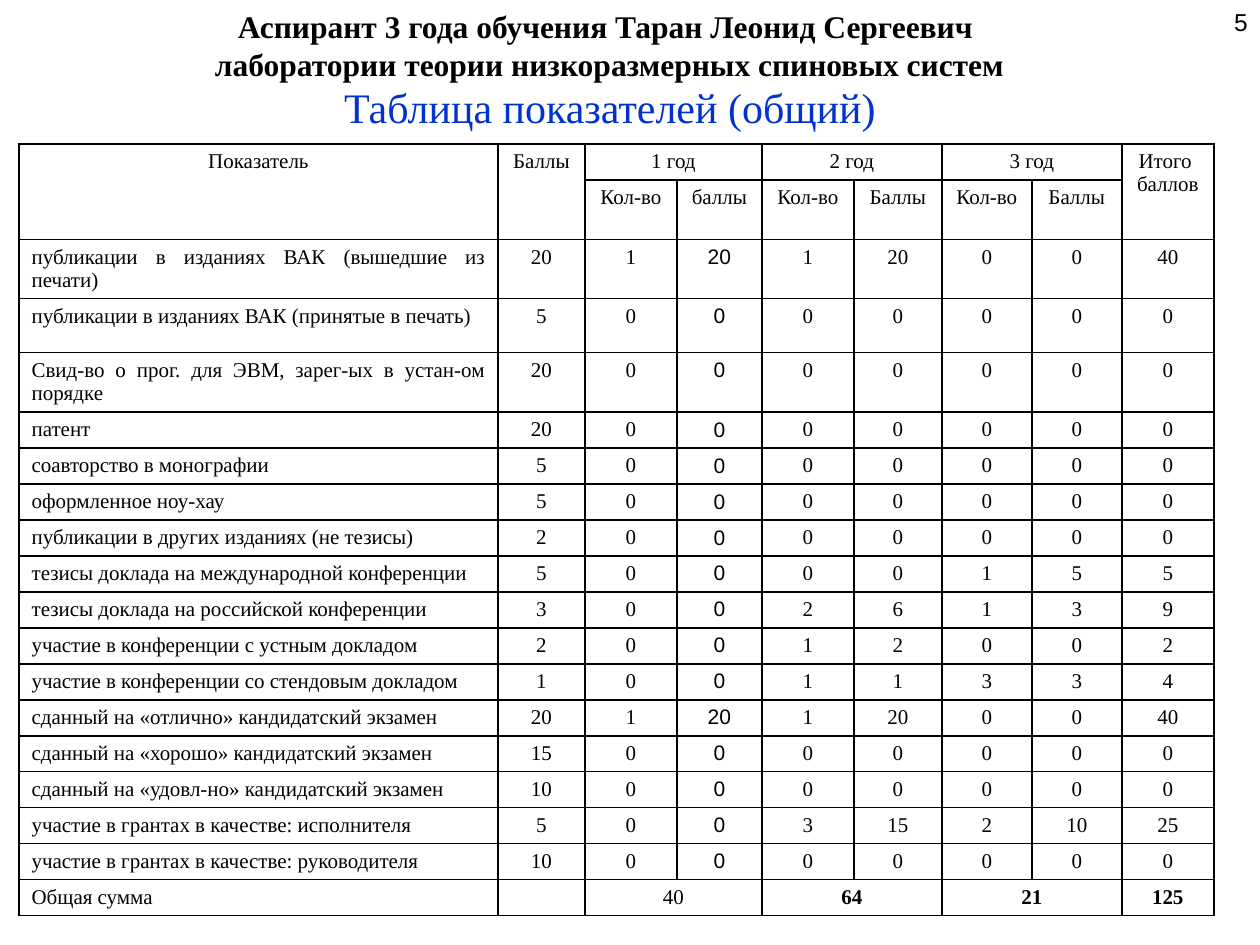
from copy import deepcopy

from lxml.etree import SubElement
from pptx import Presentation
from pptx.dml.color import RGBColor
from pptx.enum.text import MSO_ANCHOR as Anchor, MSO_AUTO_SIZE as AutoSize, PP_ALIGN as Align
from pptx.oxml.ns import qn
from pptx.util import Emu, Pt

# Content
TITLE = ("Аспирант 3 года обучения Таран Леонид Сергеевич \v"
         "лаборатории теории низкоразмерных спиновых систем")
SUBTITLE = "Таблица показателей (общий)"
PAGE = "5"
HEADER = [
    ["Показатель", "Баллы", "1 год", "", "2 год", "", "3 год", "", "Итого \nбаллов"],
    ["", "", "Кол-во", "баллы", "Кол-во", "Баллы", "Кол-во", "Баллы", ""],
]
# indicator, points, then count and points for each year, total
INDICATORS = [
    ("публикации в изданиях ВАК (вышедшие из печати)", 20, 1, 20, 1, 20, 0, 0, 40),
    ("публикации в изданиях ВАК (принятые в печать)", 5, 0, 0, 0, 0, 0, 0, 0),
    ("Свид-во о прог. для ЭВМ, зарег-ых в устан-ом порядке", 20, 0, 0, 0, 0, 0, 0, 0),
    ("патент", 20, 0, 0, 0, 0, 0, 0, 0),
    ("соавторство в монографии", 5, 0, 0, 0, 0, 0, 0, 0),
    ("оформленное ноу-хау", 5, 0, 0, 0, 0, 0, 0, 0),
    ("публикации в других изданиях (не тезисы)", 2, 0, 0, 0, 0, 0, 0, 0),
    ("тезисы доклада на международной конференции", 5, 0, 0, 0, 0, 1, 5, 5),
    ("тезисы доклада на российской конференции", 3, 0, 0, 2, 6, 1, 3, 9),
    ("участие в конференции с устным докладом", 2, 0, 0, 1, 2, 0, 0, 2),
    ("участие в конференции со стендовым докладом", 1, 0, 0, 1, 1, 3, 3, 4),
    ("сданный на «отлично» кандидатский экзамен", 20, 1, 20, 1, 20, 0, 0, 40),
    ("сданный на «хорошо» кандидатский экзамен", 15, 0, 0, 0, 0, 0, 0, 0),
    ("сданный на «удовл-но» кандидатский экзамен", 10, 0, 0, 0, 0, 0, 0, 0),
    ("участие в грантах в качестве: исполнителя", 5, 0, 0, 3, 15, 2, 10, 25),
    ("участие в грантах в качестве: руководителя", 10, 0, 0, 0, 0, 0, 0, 0),
]
TOTALS = ["Общая сумма", "", 40, "", 64, "", 21, "", 125]

# Format
COLORS = {"text": "000000", "subtitle": "0033CC", "border": "000000"}
SERIF, SANS = "Times New Roman", "Arial"
COLUMN_WIDTHS = [479, 87, 92, 85, 92, 88, 90, 90, 92]
ROW_HEIGHTS = [36, 59, 59, 54, 59] + [36] * 14
YEAR_COLUMNS = (2, 4, 6)
TALL_COLUMNS = (0, 1, 8)


def px(length):
    return Emu(length * 914400 // 126)


def write(frame, text, size=12, font=SERIF, color="text", bold=False, align=Align.CENTER):
    frame.word_wrap = True
    for index, line in enumerate(str(text).split("\n")):
        paragraph = frame.add_paragraph() if index else frame.paragraphs[0]
        paragraph.text = line
        paragraph.alignment = align
        for run in paragraph.runs:
            run.font.size, run.font.name, run.font.bold = Pt(size), font, bold
            run.font.color.rgb = RGBColor.from_string(COLORS[color])
        for line_break in paragraph._p.findall(qn("a:br")):
            line_break.append(deepcopy(paragraph.runs[0]._r.rPr))
        # The paragraph end keeps the row from growing
        end = paragraph._p.get_or_add_endParaRPr()
        end.set("sz", str(size * 100))
        SubElement(end, qn("a:latin"), typeface=font)


def outline(cell):
    cell.fill.background()
    properties = cell._tc.get_or_add_tcPr()
    for index, side in enumerate(("a:lnL", "a:lnR", "a:lnT", "a:lnB")):
        line = properties.makeelement(qn(side), {"w": str(Pt(1))})
        properties.insert(index, line)
        fill = SubElement(line, qn("a:solidFill"))
        SubElement(fill, qn("a:srgbClr"), val=COLORS["border"])


def add_label(slide, text, left, top, width, height, **style):
    label = slide.shapes.add_textbox(px(left), px(top), px(width), px(height))
    write(label.text_frame, text, **style)


def add_scores(slide):
    rows = HEADER + INDICATORS + [TOTALS]
    last = len(rows) - 1
    frame = slide.shapes.add_table(len(rows), len(COLUMN_WIDTHS), px(19), px(144),
                                   px(sum(COLUMN_WIDTHS)), px(sum(ROW_HEIGHTS)))
    scores = frame.table
    scores.first_row = scores.horz_banding = False
    for column, width in zip(scores.columns, COLUMN_WIDTHS):
        column.width = px(width)
    for row, height in zip(scores.rows, ROW_HEIGHTS):
        row.height = px(height)

    # Merged headings and yearly sums
    for c in YEAR_COLUMNS:
        for r in (0, last):
            scores.cell(r, c).merge(scores.cell(r, c + 1))
    for c in TALL_COLUMNS:
        scores.cell(0, c).merge(scores.cell(1, c))

    for r, values in enumerate(rows):
        in_body = len(HEADER) <= r < last
        for c, value in enumerate(values):
            cell = scores.cell(r, c)
            cell.margin_top, cell.margin_bottom = px(6), px(3)
            outline(cell)
            if cell.is_spanned:
                value = ""
            write(cell.text_frame, value,
                  font=SANS if in_body and c == 3 else SERIF,
                  bold=r == last and c >= 4,
                  align=Align.JUSTIFY if c == 0 and r >= len(HEADER) else Align.CENTER)


def main():
    deck = Presentation()
    deck.slide_width, deck.slide_height = px(1260), px(945)
    slide = deck.slides.add_slide(deck.slide_layouts[5])

    # Title
    title = slide.shapes.title
    title.left, title.top, title.width, title.height = px(74), px(0), px(1071), px(90)
    title.text_frame.auto_size = AutoSize.NONE
    title.text_frame.vertical_anchor = Anchor.MIDDLE
    write(title.text_frame, TITLE, size=18, bold=True)

    # Subtitle, table and page number
    add_label(slide, SUBTITLE, 169, 75, 882, 59, size=24, color="subtitle")
    add_scores(slide)
    add_label(slide, PAGE, 966, 1, 294, 66, size=14, font=SANS, align=Align.RIGHT)

    deck.save("out.pptx")


if __name__ == "__main__":
    main()
